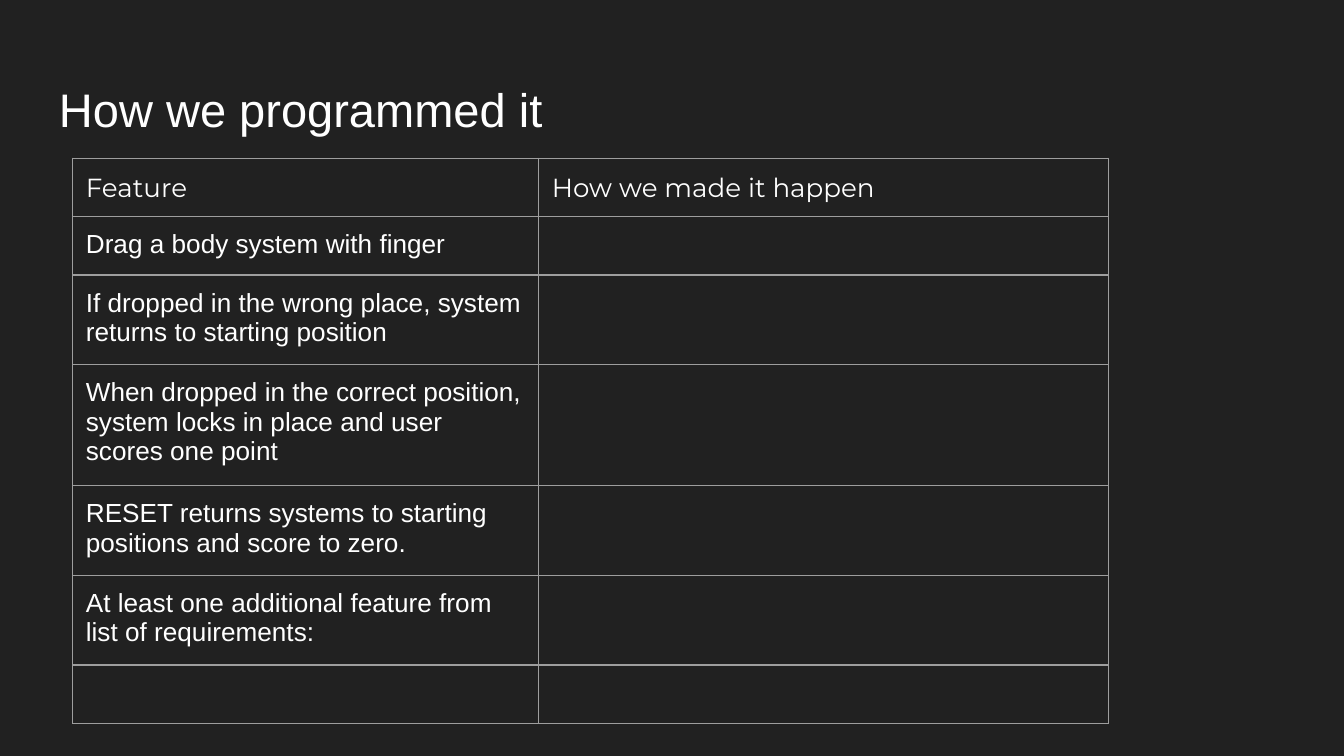
from lxml.etree import SubElement
from pptx import Presentation
from pptx.dml.color import RGBColor
from pptx.enum.text import MSO_ANCHOR as ANCHOR
from pptx.oxml.ns import qn
from pptx.util import Pt

COLORS = {"background": "212121", "text": "FFFFFF", "border": "9E9E9E"}
INSET = Pt(7.2)
MARGINS = {f"margin_{side}": INSET for side in ("left", "right", "top", "bottom")}
TITLE = {"name": "Arial", "size": Pt(25.2), "bold": False}
HEADER = {"name": "Montserrat", "size": Pt(14), "bold": False}
BODY = {"name": "Arial", "size": Pt(14), "bold": False}
COLUMN_WIDTHS = (249.7, 305.3)
ROW_HEIGHT = 31.2
ROWS = [
    ("Feature", "How we made it happen"),
    ("Drag a body system with finger", ""),
    ("If dropped in the wrong place, system returns to starting position", ""),
    ("When dropped in the correct position, system locks in place and user scores one point", ""),
    ("RESET returns systems to starting positions and score to zero.", ""),
    ("At least one additional feature from list of requirements:", ""),
    ("", ""),
]


def rgb(key):
    """Return the named colour."""
    return RGBColor.from_string(COLORS[key])


def set_attributes(obj, values):
    """Set each attribute of obj from a dict."""
    for name, value in values.items():
        setattr(obj, name, value)


def write_text(p, text, font):
    """Write one run, or size the paragraph when it is empty."""
    if text:
        r = p.add_run()
        r.text = text
        set_attributes(r.font, font)
        r.font.color.rgb = rgb("text")
    else:
        SubElement(p._p, qn("a:endParaRPr"), sz=str(int(font["size"].pt * 100)))


def add_title(s, text):
    """Add the slide heading."""
    sp = s.shapes.add_textbox(Pt(24.5), Pt(35.3), Pt(671), Pt(45.4))
    tf = sp.text_frame
    set_attributes(tf, {**MARGINS, "word_wrap": True, "vertical_anchor": ANCHOR.MIDDLE})
    write_text(tf.paragraphs[0], text, TITLE)


def add_borders(cell):
    """Draw a thin line on every side of a cell."""
    tc_pr = cell._tc.get_or_add_tcPr()
    for side in ("lnL", "lnR", "lnT", "lnB"):
        ln = SubElement(tc_pr, qn(f"a:{side}"), w=str(Pt(0.75)))
        fill = SubElement(ln, qn("a:solidFill"))
        SubElement(fill, qn("a:srgbClr"), val=COLORS["border"])


def add_feature_table(s, rows):
    """Add the table of features."""
    sp = s.shapes.add_table(
        len(rows), len(COLUMN_WIDTHS), Pt(38.8), Pt(84.8),
        Pt(sum(COLUMN_WIDTHS)), Pt(ROW_HEIGHT * len(rows)))
    table = sp.table
    set_attributes(table, {"first_row": False, "horz_banding": False})
    for column, width in zip(table.columns, COLUMN_WIDTHS):
        column.width = Pt(width)
    for i, texts in enumerate(rows):
        table.rows[i].height = Pt(ROW_HEIGHT)
        for j, text in enumerate(texts):
            cell = table.cell(i, j)
            set_attributes(cell, MARGINS)
            add_borders(cell)
            cell.fill.background()
            write_text(cell.text_frame.paragraphs[0], text, BODY if i else HEADER)


def main():
    """Build and save the slide."""
    prs = Presentation()
    set_attributes(prs, {"slide_width": Pt(720), "slide_height": Pt(405)})
    s = prs.slides.add_slide(prs.slide_layouts[6])
    s.background.fill.solid()
    s.background.fill.fore_color.rgb = rgb("background")
    add_title(s, "How we programmed it")
    add_feature_table(s, ROWS)
    prs.save("out.pptx")


if __name__ == "__main__":
    main()
